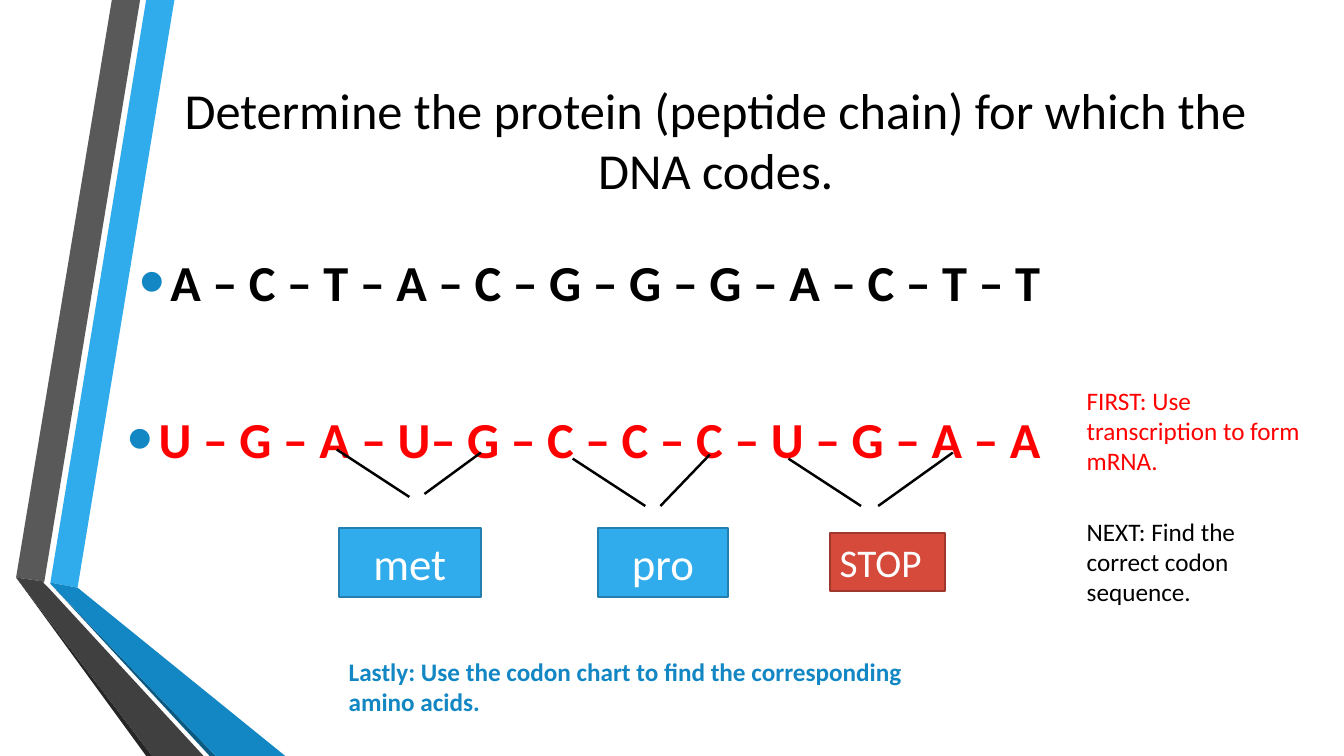
import pptx
import pptx.dml.color
import pptx.enum.shapes
import pptx.enum.text
import pptx.oxml
import pptx.oxml.ns
import pptx.util

PX = 9144  # 100 px to the inch
FONT = "Calibri"
BLUE, DEEP_BLUE, RED, BLACK, WHITE = "30ACEC", "1287C3", "FF0000", "000000", "FFFFFF"
LEFT = pptx.enum.text.PP_ALIGN.LEFT
CENTER = pptx.enum.text.PP_ALIGN.CENTER
TOP = pptx.enum.text.MSO_ANCHOR.TOP
MIDDLE = pptx.enum.text.MSO_ANCHOR.MIDDLE

RIBBONS = [
    (BLUE, [(50, 578), (77, 583), (173, 0), (145, 0)]),
    ("595959", [(139, 0), (111, 0), (16, 573), (44, 577)]),
    ("262626", [(16, 573), (145, 750), (151, 750)]),
    ("0C5A82", [(50, 579), (208, 750), (214, 750)]),
    (DEEP_BLUE, [(50, 578), (50, 579), (214, 750), (283, 750), (77, 583)]),
    ("404040", [(202, 750), (48, 583), (43, 578), (44, 577), (16, 573), (151, 750)]),
]

# Both branches of each codon: from the base letter down towards the amino acid
CODON_BRANCHES = [
    ((334, 446), (406, 493)), ((477, 449), (421, 490)),
    ((568, 455), (640, 502)), ((704, 451), (655, 502)),
    ((782, 455), (854, 502)), ((945, 449), (871, 502)),
]


def px(*lengths):
    return [length * PX for length in lengths]


def color(hex_code):
    return pptx.dml.color.RGBColor.from_string(hex_code)


def paint(shape, fill, outline=None):
    shape.shadow.inherit = False
    shape.fill.solid()
    shape.fill.fore_color.rgb = color(fill)
    if outline:
        shape.line.color.rgb = color(outline)
        shape.line.width = pptx.util.Pt(1.25)
    else:
        shape.line.fill.background()


def add_run(paragraph, words, size, ink, bold=False):
    run = paragraph.add_run()
    run.text = words
    run.font.name = FONT
    run.font.size = pptx.util.Pt(size)
    run.font.bold = bold
    run.font.color.rgb = color(ink)


def set_frame(shape, align, anchor):
    """Prepare the text frame and return its first paragraph."""
    shape.text_frame.word_wrap = True
    shape.text_frame.vertical_anchor = anchor
    first = shape.text_frame.paragraphs[0]
    first.alignment = align
    return first


def add_bullet(paragraph):
    properties = paragraph._p.get_or_add_pPr()
    properties.set("marL", str(31 * PX))
    properties.set("indent", str(-31 * PX))
    namespace = pptx.oxml.ns.nsdecls("a")
    for xml in (
        f'<a:buClr {namespace}><a:srgbClr val="{DEEP_BLUE}"/></a:buClr>',
        f'<a:buSzPct {namespace} val="145000"/>',
        f'<a:buFont {namespace} typeface="Arial"/>',
        f'<a:buChar {namespace} char="•"/>',
    ):
        properties.append(pptx.oxml.parse_xml(xml))


def draw_ribbons(slide):
    for fill, (start, *corners) in RIBBONS:
        outline = slide.shapes.build_freeform(*start, scale=PX)
        outline.add_line_segments(corners, close=True)
        paint(outline.convert_to_shape(), fill)


def draw_text(slide, box, words, size, ink, align=LEFT, anchor=TOP, bold=False):
    caption = slide.shapes.add_textbox(*px(*box))
    add_run(set_frame(caption, align, anchor), words, size, ink, bold)


def draw_strands(slide, box):
    """DNA strand above its mRNA transcript."""
    strands = slide.shapes.add_textbox(*px(*box))
    dna = set_frame(strands, CENTER, MIDDLE)
    add_bullet(dna)
    add_run(dna, "A – C – T – A – C – G – G – G – A – C – T – T", 36, BLACK, True)
    mrna = strands.text_frame.add_paragraph()
    mrna.alignment = CENTER
    mrna.space_before = pptx.util.Pt(69)
    add_bullet(mrna)
    add_run(mrna, "U – G – A – U– G – C – C – C – U – G – A – A ", 36, RED, True)


def draw_branches(slide):
    for start, end in CODON_BRANCHES:
        branch = slide.shapes.add_connector(
            pptx.enum.shapes.MSO_CONNECTOR.STRAIGHT, *px(*start, *end))
        branch.line.color.rgb = color(BLACK)
        branch.line.width = pptx.util.Pt(1.75)
        branch._element.spPr.append(
            pptx.oxml.parse_xml(f'<a:effectLst {pptx.oxml.ns.nsdecls("a")}/>'))


def draw_amino_acid(slide, box, label, size, fill, outline, align=CENTER, anchor=MIDDLE):
    tile = slide.shapes.add_shape(pptx.enum.shapes.MSO_SHAPE.RECTANGLE, *px(*box))
    paint(tile, fill, outline)
    add_run(set_frame(tile, align, anchor), label, size, WHITE)


def main():
    deck = pptx.Presentation()
    deck.slide_width, deck.slide_height = px(1333, 750)
    slide = deck.slides.add_slide(deck.slide_layouts[6])

    draw_ribbons(slide)
    draw_text(slide, (162, 75, 1096, 127),
              "Determine the protein (peptide chain) for which the DNA codes.",
              36, BLACK, CENTER, MIDDLE)
    draw_strands(slide, (37, 236, 1096, 242))
    draw_text(slide, (1068, 377, 243, 101),
              "FIRST: Use transcription to form mRNA.", 18, RED)
    draw_text(slide, (1068, 507, 190, 101),
              "NEXT: Find the correct codon sequence.", 18, BLACK)
    draw_branches(slide)
    draw_amino_acid(slide, (336, 524, 141, 68), "met", 32, BLUE, "247FAF")
    draw_amino_acid(slide, (593, 524, 129, 68), "pro", 32, BLUE, "247FAF")
    draw_amino_acid(slide, (823, 529, 114, 57), "STOP", 28, "D64A3B", "9E372C", LEFT, TOP)
    draw_text(slide, (336, 646, 623, 71),
              "Lastly: Use the codon chart to find the corresponding amino acids.",
              18, DEEP_BLUE, bold=True)

    deck.save("out.pptx")


if __name__ == "__main__":
    main()
